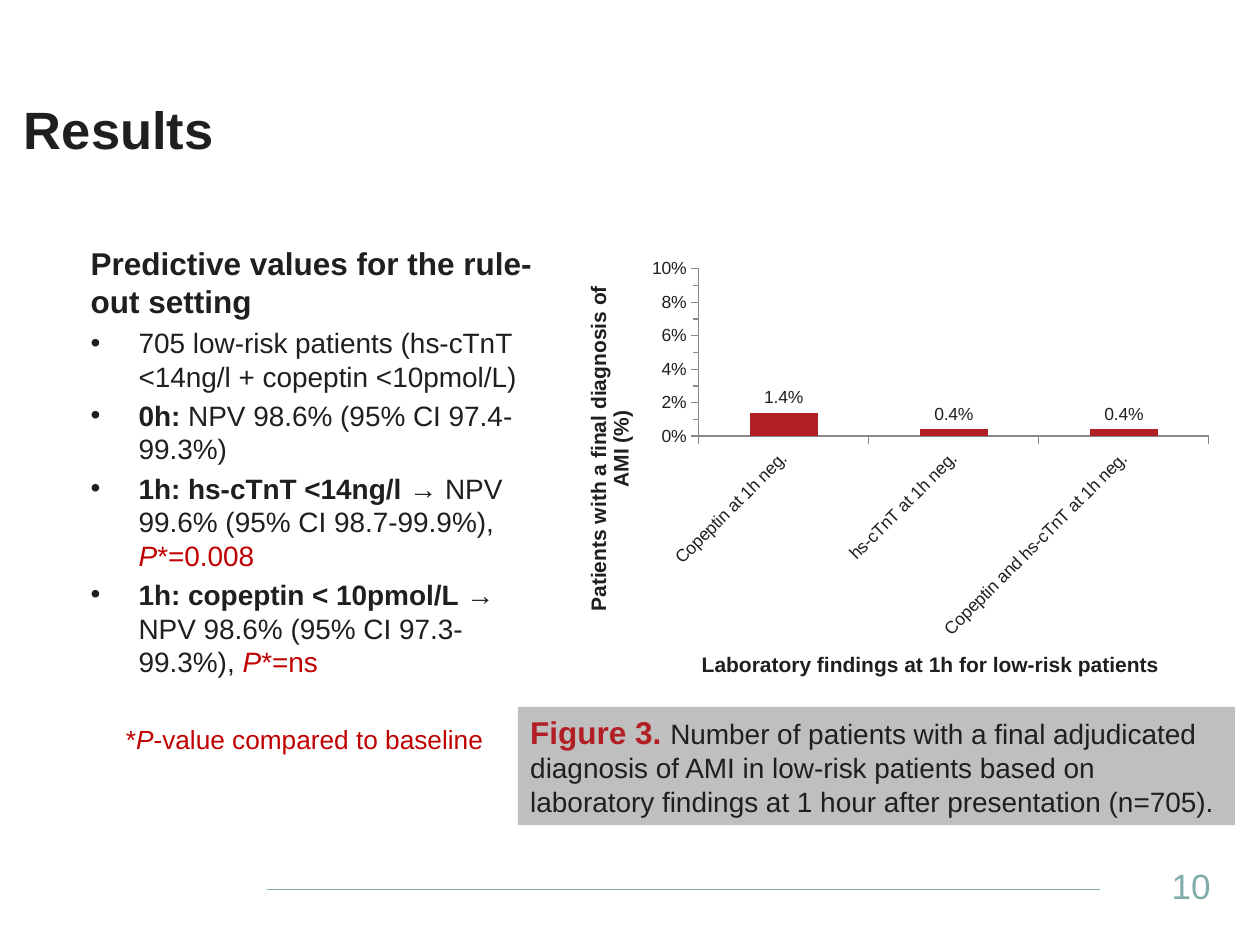
from lxml import etree
from pptx import Presentation
from pptx import util as u
from pptx.chart import data
from pptx.dml.color import RGBColor
from pptx.enum import chart as charts, shapes, text
from pptx.oxml import ns

DARK, RED, ACCENT, TEAL, GREY = "1F1F1F", "C00000", "B11F24", "81ADA8", "BFBFBF"


def color(value):
    return RGBColor.from_string(value)


class SlideBuilder:
    """Holds the font style and the current slide, and adds each kind of element."""

    def __init__(self, slide, font_name="Arial"):
        self.slide = slide
        self.font_name = font_name

    def style(self, font, size, fill=DARK, bold=False):
        font.name = self.font_name
        font.size = u.Pt(size)
        font.bold = bold
        font.color.rgb = color(fill)

    def place(self, shape, box):
        shape.left, shape.top, shape.width, shape.height = map(u.Inches, box)

    def add_runs(self, paragraph, runs, size, fill=DARK, bold=False):
        self.style(paragraph.font, size, fill, bold)
        for content, changes in runs:
            run = paragraph.add_run()
            run.text = content
            run.font.bold = changes.get("bold")
            run.font.italic = changes.get("italic")
            run.font.size = changes.get("size")
            if "color" in changes:
                run.font.color.rgb = color(changes["color"])

    def title(self, content, box):
        shape = self.slide.shapes.title
        self.place(shape, box)
        frame = shape.text_frame
        frame.vertical_anchor = text.MSO_ANCHOR.TOP
        frame.auto_size = text.MSO_AUTO_SIZE.NONE
        paragraph = frame.paragraphs[0]
        paragraph.alignment = text.PP_ALIGN.LEFT
        self.add_runs(paragraph, [(content, {})], 30, bold=True)

    def body(self, heading, items, box):
        shape = self.slide.placeholders[1]
        self.place(shape, box)
        frame = shape.text_frame
        frame.auto_size = text.MSO_AUTO_SIZE.NONE
        paragraph = frame.paragraphs[0]
        paragraph.space_before = u.Pt(0)
        self.bullet(paragraph, None)
        self.add_runs(paragraph, [(heading, {})], 18, bold=True)
        for runs in items:
            paragraph = frame.add_paragraph()
            paragraph.space_before = u.Pt(3.2)
            self.bullet(paragraph, "•")
            self.add_runs(paragraph, runs, 16)

    def bullet(self, paragraph, character):
        properties = paragraph._p.get_or_add_pPr()
        indent = u.Inches(0.38) if character else 0
        properties.set("marL", str(indent))
        properties.set("indent", str(-indent))
        if character:
            etree.SubElement(properties, ns.qn("a:buChar")).set("char", character)
        else:
            etree.SubElement(properties, ns.qn("a:buNone"))

    def textbox(self, runs, box, size, fill, anchor=text.MSO_ANCHOR.TOP):
        shape = self.slide.shapes.add_textbox(*map(u.Inches, box))
        frame = shape.text_frame
        frame.word_wrap = True
        frame.vertical_anchor = anchor
        self.add_runs(frame.paragraphs[0], runs, size, fill)

    def panel(self, runs, box, size, fill):
        shape = self.slide.shapes.add_shape(
            shapes.MSO_SHAPE.RECTANGLE, *map(u.Inches, box))
        shape.shadow.inherit = False
        shape.fill.solid()
        shape.fill.fore_color.rgb = color(fill)
        shape.line.fill.background()
        frame = shape.text_frame
        frame.word_wrap = True
        frame.vertical_anchor = text.MSO_ANCHOR.TOP
        paragraph = frame.paragraphs[0]
        paragraph.alignment = text.PP_ALIGN.LEFT
        self.add_runs(paragraph, runs, size)

    def line(self, start, end, fill, width):
        connector = self.slide.shapes.add_connector(
            shapes.MSO_CONNECTOR.STRAIGHT, *map(u.Inches, start + end))
        connector.line.color.rgb = color(fill)
        connector.line.width = u.Pt(width)
        etree.SubElement(connector._element.spPr, ns.qn("a:effectLst"))

    def axis(self, axis, title):
        axis.has_major_gridlines = False
        axis.major_tick_mark = charts.XL_TICK_MARK.OUTSIDE
        axis.format.line.color.rgb = color("878787")
        self.style(axis.tick_labels.font, 10)
        paragraph = axis.axis_title.text_frame.paragraphs[0]
        self.add_runs(paragraph, [(title, {})], 12, bold=True)

    def plot_area(self, chart, **fractions):
        area = chart._chartSpace.chart.plotArea
        layout = area.find(ns.qn("c:layout"))
        if layout is None:
            layout = etree.Element(ns.qn("c:layout"))
            area.insert(0, layout)
        manual = etree.SubElement(layout, ns.qn("c:manualLayout"))
        settings = dict(layoutTarget="inner", xMode="edge", yMode="edge", **fractions)
        for name, value in settings.items():
            etree.SubElement(manual, ns.qn(f"c:{name}")).set("val", str(value))

    def column_chart(self, categories, values, category_title, value_title, box):
        chart_data = data.CategoryChartData()
        chart_data.categories = categories
        chart_data.add_series("Series 1", values)
        chart = self.slide.shapes.add_chart(
            charts.XL_CHART_TYPE.COLUMN_CLUSTERED,
            *map(u.Inches, box), chart_data).chart
        self.style(chart.font, 10)
        chart.has_legend = False
        chart.has_title = False
        self.plot_area(chart, x=0.21, y=0.04, w=0.77, h=0.37)

        self.axis(chart.category_axis, category_title)
        label_body = chart.category_axis._element.find(ns.qn("c:txPr")).bodyPr
        label_body.set("rot", "-2700000")
        value_axis = chart.value_axis
        self.axis(value_axis, value_title)
        value_axis.minor_tick_mark = charts.XL_TICK_MARK.OUTSIDE
        value_axis.minimum_scale, value_axis.maximum_scale = 0, 0.1
        value_axis.major_unit, value_axis.minor_unit = 0.02, 0.01
        value_axis.tick_labels.number_format = "0%"
        value_axis.tick_labels.number_format_is_linked = False

        plot = chart.plots[0]
        plot.gap_width = 150
        plot.vary_by_categories = False
        fill = plot.series[0].format.fill
        fill.solid()
        fill.fore_color.rgb = color(ACCENT)
        plot.has_data_labels = True
        labels = plot.data_labels
        labels.show_value = True
        labels.number_format = "0.0%"
        labels.number_format_is_linked = False
        labels.position = charts.XL_LABEL_POSITION.OUTSIDE_END
        self.style(labels.font, 10)


def main():
    presentation = Presentation()
    presentation.slide_width, presentation.slide_height = u.Inches(10), u.Inches(7.5)
    builder = SlideBuilder(presentation.slides.add_slide(presentation.slide_layouts[1]))
    bold, red, red_italic = {"bold": True}, {"color": RED}, {"color": RED, "italic": True}

    builder.line((2.12, 7.06), (8.73, 7.06), TEAL, 0.5)
    builder.title("Results", (0.09, 0.72, 7.93, 0.82))
    builder.body("Predictive values for the rule-out setting", [
        [("705 low-risk patients (hs-cTnT <14ng/l + copeptin <10pmol/L)", {})],
        [("0h:", bold), (" NPV 98.6% (95% CI 97.4-99.3%)", {})],
        [("1h: hs-cTnT <14ng/l ", bold), ("→ NPV 99.6% (95% CI 98.7-99.9%), ", {}),
         ("P", red_italic), ("*=0.008", red)],
        [("1h: copeptin < 10pmol/L ", bold), ("→ NPV 98.6% (95% CI 97.3-99.3%), ", {}),
         ("P", red_italic), ("*=ns", red)],
    ], (0.62, 1.89, 3.84, 4.15))
    builder.textbox([("10", {})], (9.2, 6.83, 0.8, 0.4), 20, TEAL, text.MSO_ANCHOR.MIDDLE)
    builder.panel([
        ("Figure 3. ", {"size": u.Pt(18), "bold": True, "color": ACCENT}),
        ("Number of patients with a final adjudicated diagnosis of AMI in low-risk "
         "patients based on laboratory findings at 1 hour after presentation (n=705).", {}),
    ], (4.11, 5.61, 5.69, 0.94), 16, GREY)
    builder.textbox([("*", {}), ("P", {"italic": True}), ("-value compared to baseline", {})],
                    (0.9, 5.69, 3.15, 0.35), 15, RED)
    builder.column_chart(
        ["Copeptin at 1h neg.", "hs-cTnT at 1h neg.", "Copeptin and hs-cTnT at 1h neg."],
        [0.014, 0.004, 0.004],
        "Laboratory findings at 1h for low-risk patients",
        "Patients with a final diagnosis of AMI (%)", (4.44, 1.99, 5.26, 3.59))
    presentation.save("out.pptx")


if __name__ == "__main__":
    main()
